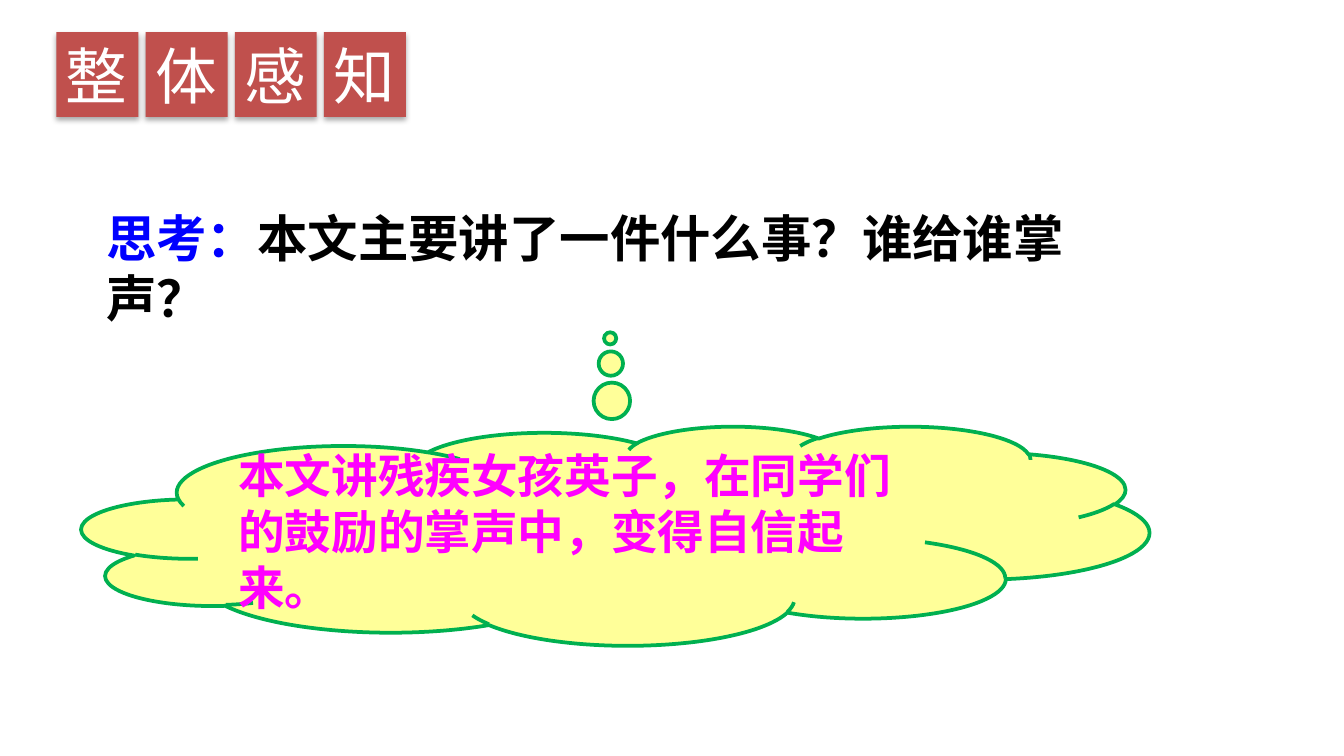
from lxml import etree
from pptx import Presentation
from pptx.dml.color import RGBColor
from pptx.enum.shapes import MSO_SHAPE
from pptx.enum.text import MSO_ANCHOR, MSO_AUTO_SIZE, PP_ALIGN
from pptx.oxml.ns import qn
from pptx.util import Inches, Pt

FONT = "Noto Sans CJK SC"
COLORS = {
    "tile": "C0504D", "tile_text": "FFFFFF", "shadow": "000000",
    "label": "0000FF", "question": "000000",
    "cloud": "FFFF99", "cloud_line": "00B050", "answer": "FF00FF",
}
HEADING = "整体感知"
QUESTION = [("思考：", "label"), ("本文主要讲了一件什么事？谁给谁掌声？", "question")]
ANSWER = "本文讲残疾女孩英子，在同学们的鼓励的掌声中，变得自信起来。"

TILE_LEFT, TILE_TOP, TILE_WIDTH, TILE_HEIGHT = 0.42, 0.24, 0.61, 0.63
TILE_STEP = 1.99 / 3


def color(name):
    return RGBColor.from_string(COLORS[name])


def add_span(para, text, size, color_name, bold=False):
    span = para.add_run()
    span.text = text
    span.font.size = Pt(size)
    span.font.bold = bold
    span.font.name = FONT
    span.font.color.rgb = color(color_name)
    east_asian = etree.SubElement(span._r.get_or_add_rPr(), qn("a:ea"))
    east_asian.set("typeface", FONT)


def set_frame(frame, side, end, wrap=True):
    """Set margins and wrapping, and keep punctuation inside the margins."""
    frame.margin_left = frame.margin_right = Inches(side)
    frame.margin_top = frame.margin_bottom = Inches(end)
    frame.word_wrap = wrap
    frame.paragraphs[0].alignment = PP_ALIGN.LEFT
    frame.paragraphs[0]._p.get_or_add_pPr().set("hangingPunct", "0")


def add_filled_shape(page, preset, place, fill):
    shape = page.shapes.add_shape(preset, *map(Inches, place))
    shape.shadow.inherit = False
    shape.fill.solid()
    shape.fill.fore_color.rgb = color(fill)
    shape.text_frame.vertical_anchor = MSO_ANCHOR.MIDDLE
    return shape


def add_drop_shadow(shape):
    effects = shape._element.spPr.find(qn("a:effectLst"))
    shadow = etree.SubElement(
        effects, qn("a:outerShdw"), blurRad=str(Pt(3.1)), dist=str(Pt(1.8)),
        dir="5400000", rotWithShape="0")
    tint = etree.SubElement(shadow, qn("a:srgbClr"), val=COLORS["shadow"])
    etree.SubElement(tint, qn("a:alpha"), val="35000")


def add_question(page):
    box = page.shapes.add_textbox(Inches(0.73), Inches(1.51), Inches(7.88), Inches(0.51))
    set_frame(box.text_frame, 0.06, 0.03)
    box.text_frame.auto_size = MSO_AUTO_SIZE.SHAPE_TO_FIT_TEXT
    para = box.text_frame.paragraphs[0]
    para.space_before = Pt(13.5)
    for text, color_name in QUESTION:
        add_span(para, text, 27, color_name, bold=True)


def add_heading(page):
    for index, character in enumerate(HEADING):
        left = TILE_LEFT + index * TILE_STEP
        tile = add_filled_shape(page, MSO_SHAPE.RECTANGLE,
                                (left, TILE_TOP, TILE_WIDTH, TILE_HEIGHT), "tile")
        tile.line.fill.background()
        add_drop_shadow(tile)
        set_frame(tile.text_frame, 0.07, 0.04, wrap=False)
        tile.text_frame.auto_size = MSO_AUTO_SIZE.SHAPE_TO_FIT_TEXT
        add_span(tile.text_frame.paragraphs[0], character, 33, "tile_text")


def add_answer(page):
    cloud = add_filled_shape(page, MSO_SHAPE.CLOUD_CALLOUT, (0.61, 3.17, 7.94, 1.63), "cloud")
    cloud.adjustments[0] = -0.005
    cloud.adjustments[1] = -0.9
    cloud.line.color.rgb = color("cloud_line")
    cloud.line.width = Pt(2)
    set_frame(cloud.text_frame, 0.07, 0.04)
    add_span(cloud.text_frame.paragraphs[0], ANSWER, 25, "answer", bold=True)


def main():
    deck = Presentation()
    deck.slide_width = Inches(10)
    deck.slide_height = deck.slide_width * 9 // 16
    page = deck.slides.add_slide(deck.slide_layouts[6])
    add_question(page)
    add_heading(page)
    add_answer(page)
    deck.save("out.pptx")


if __name__ == "__main__":
    main()
